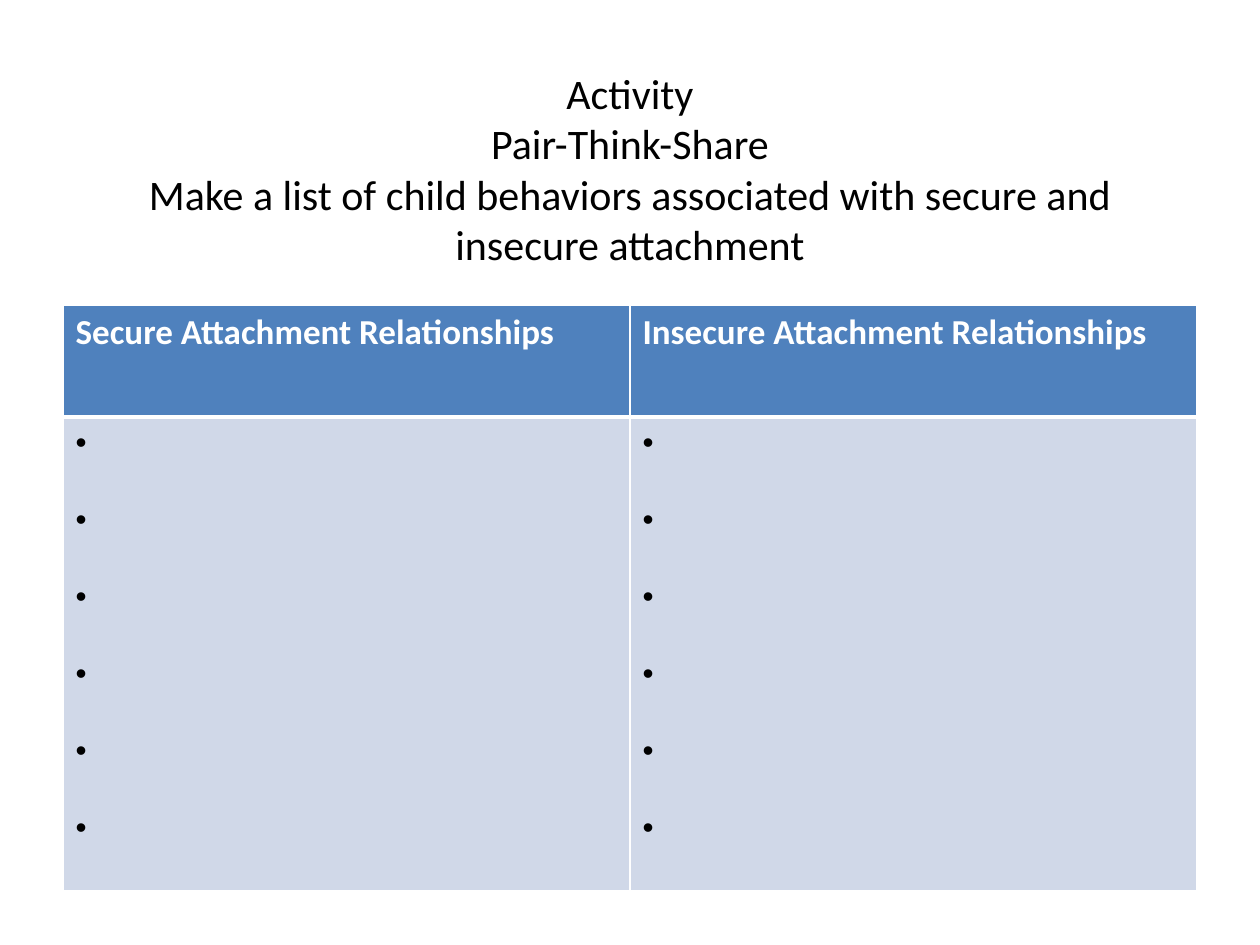
from lxml.etree import SubElement as Sub
from pptx import Presentation
from pptx.dml.color import RGBColor as Rgb
from pptx.enum.text import MSO_ANCHOR as Anchor, PP_ALIGN as Align
from pptx.oxml.ns import qn
from pptx.util import Inches, Pt

TITLE = ("Activity\vPair-Think-Share\v"
         "Make a list of child behaviors associated with secure and insecure attachment")
HEADS = ["Secure Attachment Relationships", "Insecure Attachment Relationships"]
COUNT = 6
ROWS = [0.89, 3.76]
FILLS = ["4F81BD", "D0D8E8"]
WHITE, BLACK = "FFFFFF", "000000"


def color(code):
    """Turn a hex string into a colour."""
    return Rgb.from_string(code)


def write(frame, lines, size=18, ink=BLACK, bold=False, align=Align.LEFT, after=0, dots=False):
    """Fill a text frame with one paragraph per line."""
    frame.word_wrap = True
    for i, line in enumerate(lines):
        para = frame.add_paragraph() if i else frame.paragraphs[0]
        para.text = line
        para.alignment = align
        para.space_after = Pt(after)
        for run in para.runs:
            font = run.font
            font.name, font.size, font.bold = "Calibri", Pt(size), bold
            font.color.rgb = color(ink)
        if dots:
            props = para._p.get_or_add_pPr()
            Sub(props, qn("a:buFont"), typeface="Arial")
            Sub(props, qn("a:buChar"), char="•")


def border(cell, **sides):
    """Draw white cell borders of the given widths in points."""
    props = cell._tc.get_or_add_tcPr()
    for side, width in sides.items():
        line = Sub(props, qn("a:ln" + side), w=str(Pt(width)))
        Sub(Sub(line, qn("a:solidFill")), qn("a:srgbClr"), val=WHITE)


def main():
    """Build the slide and save it."""
    deck = Presentation()
    deck.slide_width, deck.slide_height = Inches(10), Inches(7.5)
    slide = deck.slides.add_slide(deck.slide_layouts[6])

    title = slide.shapes.add_textbox(Inches(0.5), Inches(0.42), Inches(9), Inches(1.83)).text_frame
    title.vertical_anchor = Anchor.MIDDLE
    write(title, [TITLE], size=24, align=Align.CENTER)

    table = slide.shapes.add_table(2, len(HEADS), Inches(0.5), Inches(2.42),
                                   Inches(9), Inches(sum(ROWS))).table
    table.horz_banding = False
    for row, high in zip(table.rows, ROWS):
        row.height = Inches(high)
    for col, head in enumerate(HEADS):
        top, body = table.cell(0, col), table.cell(1, col)
        write(top.text_frame, [head], size=20, ink=WHITE, bold=True)
        write(body.text_frame, [" "] * COUNT, after=22, dots=True)
        border(top, L=1, R=1, T=1, B=3)
        border(body, L=1, R=1, T=3, B=1)
        for cell, fill in zip((top, body), FILLS):
            cell.fill.solid()
            cell.fill.fore_color.rgb = color(fill)

    deck.save("out.pptx")


if __name__ == "__main__":
    main()
